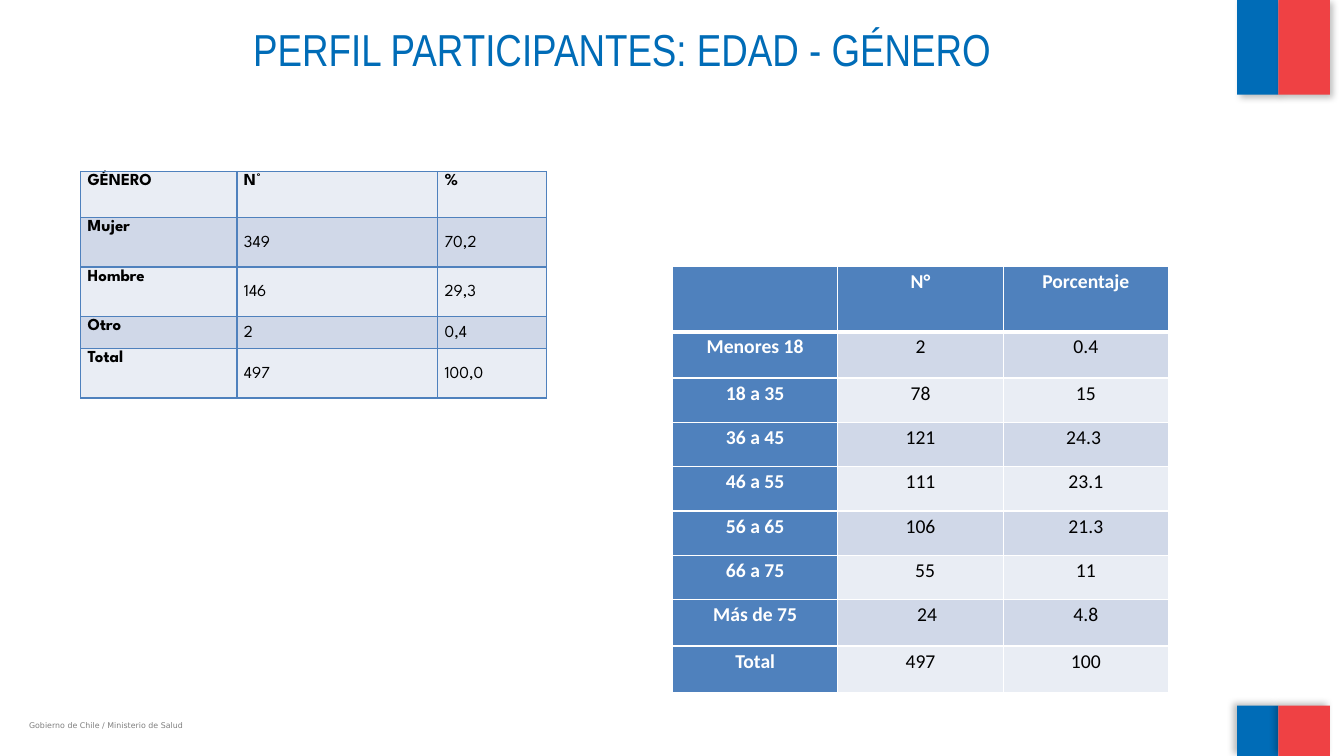
"""Build the participant profile slide with its gender and age tables."""
from lxml import etree
from pptx import Presentation
from pptx.dml.color import RGBColor
from pptx.enum.shapes import MSO_SHAPE
from pptx.enum.text import MSO_ANCHOR, PP_ALIGN
from pptx.oxml import parse_xml
from pptx.oxml.ns import nsdecls, qn
from pptx.util import Inches, Pt

RECTANGLE = MSO_SHAPE.RECTANGLE
TOP, MIDDLE = MSO_ANCHOR.TOP, MSO_ANCHOR.MIDDLE
LEFT, CENTER = PP_ALIGN.LEFT, PP_ALIGN.CENTER

FLAG_BLUE = RGBColor(0x00, 0x6C, 0xB7)
FLAG_RED = RGBColor(0xEF, 0x41, 0x44)
GRAY = RGBColor(0x7F, 0x7F, 0x7F)
BLACK = RGBColor(0x00, 0x00, 0x00)
WHITE = RGBColor(0xFF, 0xFF, 0xFF)
TABLE_BLUE = RGBColor(0x4F, 0x81, 0xBD)
BAND_DARK = RGBColor(0xD0, 0xD8, 0xE8)
BAND_LIGHT = RGBColor(0xE9, 0xED, 0xF4)
BANDS = (BAND_LIGHT, BAND_DARK)

GENDER_ROWS = [
    ("GÉNERO", "N°", "%"),
    ("Mujer", "349", "70,2"),
    ("Hombre", "146", "29,3"),
    ("Otro", "2", "0,4"),
    ("Total", "497", "100,0"),
]
AGE_ROWS = [
    ("", "N°", "Porcentaje"),
    ("Menores 18", "2", "0.4"),
    ("18 a 35", "78", "15"),
    ("36 a 45", "121", "24.3 "),
    ("46 a 55", "111", "23.1"),
    ("56 a 65", "106", "21.3"),
    ("66 a 75", "55", "11"),
    ("Más de 75", "24", "4.8"),
    ("Total", "497", "100"),
]
AGE_INDENTS = {"55": 0.09, "24": 0.13}


def add_grid(slide, left, top, widths, heights):
    frame = slide.shapes.add_table(
        len(heights), len(widths), Inches(left), Inches(top),
        Inches(sum(widths)), Inches(sum(heights)))
    grid = frame.table
    for column, width in zip(grid.columns, widths):
        column.width = Inches(width)
    for row, height in zip(grid.rows, heights):
        row.height = Inches(height)
    return grid


def fill_cell(cell, text, font, size, color, bold, align, fill, border, top=1, bottom=1):
    properties = cell._tc.get_or_add_tcPr()
    for side, width in (("L", 1), ("R", 1), ("T", top), ("B", bottom)):
        line = etree.SubElement(properties, qn(f"a:ln{side}"), w=str(Pt(width)))
        solid = etree.SubElement(line, qn("a:solidFill"))
        etree.SubElement(solid, qn("a:srgbClr"), val=str(border))
    cell.fill.solid()
    cell.fill.fore_color.rgb = fill
    cell.margin_left = cell.margin_right = Inches(0.07)
    cell.margin_top = cell.margin_bottom = 0
    para = cell.text_frame.paragraphs[0]
    para.alignment = align
    para.line_spacing = 1.15
    if text:
        span = para.add_run()
        span.text = text
        span.font.name = font
        span.font.size = Pt(size)
        span.font.bold = bold
        span.font.color.rgb = color


deck = Presentation()
deck.slide_width, deck.slide_height = Inches(13.33), Inches(7.5)
page = deck.slides.add_slide(deck.slide_layouts[5])

for left, top, width, height, color, angle in (
    (12.27, -0.01, 0.41, 0.95, FLAG_BLUE, 45),
    (12.68, 0, 0.51, 0.94, FLAG_RED, 45),
    (12.27, 7, 0.41, 0.5, FLAG_BLUE, 215),
    (12.68, 7, 0.51, 0.5, FLAG_RED, 215),
):
    block = page.shapes.add_shape(
        RECTANGLE, Inches(left), Inches(top), Inches(width), Inches(height))
    block.fill.solid()
    block.fill.fore_color.rgb = color
    block.line.fill.background()
    block._element.spPr.append(parse_xml(
        f'<a:effectLst {nsdecls("a")}><a:outerShdw blurRad="{Pt(5)}" dist="{Pt(3)}" '
        f'dir="{angle * 60000}" algn="ctr" rotWithShape="0"><a:srgbClr val="000000">'
        '<a:alpha val="25000"/></a:srgbClr></a:outerShdw></a:effectLst>'))

title = page.shapes.title
title.left, title.top = Inches(0.22), Inches(0.17)
title.width, title.height = Inches(11.91), Inches(1.25)
footer = page.shapes.add_textbox(Inches(0.19), Inches(7.1), Inches(4.03), Inches(0.2))

for box, text, font, size, color, align in (
    (title, "PERFIL PARTICIPANTES: EDAD - GÉNERO", "Arial Narrow", 32, FLAG_BLUE, CENTER),
    (footer, "Gobierno de Chile / Ministerio de Salud", "DejaVu Sans", 5.6, GRAY, LEFT),
):
    box.text_frame.word_wrap = True
    box.text_frame.vertical_anchor = TOP
    para = box.text_frame.paragraphs[0]
    para.alignment = align
    span = para.add_run()
    span.text = text
    span.font.name = font
    span.font.size = Pt(size)
    span.font.color.rgb = color

gender_table = add_grid(page, 0.8, 1.7, [1.55, 1.99, 1.08], [0.46, 0.49, 0.49, 0.32, 0.49])
for r, values in enumerate(GENDER_ROWS):
    for c, value in enumerate(values):
        cell = gender_table.cell(r, c)
        heading = r == 0 or c == 0
        fill_cell(cell, value, "League Spartan", 12, BLACK, heading, LEFT,
                  BANDS[r % 2], TABLE_BLUE)
        cell.vertical_anchor = TOP if heading else MIDDLE

age_heights = [0.65, 0.46] + [0.44] * 5 + [0.46] * 2
age_table = add_grid(page, 6.67, 2.64, [1.64] * 3, age_heights)
for r, values in enumerate(AGE_ROWS):
    for c, value in enumerate(values):
        cell = age_table.cell(r, c)
        heading = r == 0 or c == 0
        fill_cell(cell, value, "Calibri", 14, WHITE if heading else BLACK, heading, CENTER,
                  TABLE_BLUE if heading else BANDS[r % 2], WHITE,
                  top=3 if r == 1 else 1, bottom=3 if r == 0 else 1)
        cell.text_frame.paragraphs[0].space_after = Pt(10)
        cell.margin_left += Inches(AGE_INDENTS.get(value, 0))

deck.save("out.pptx")
